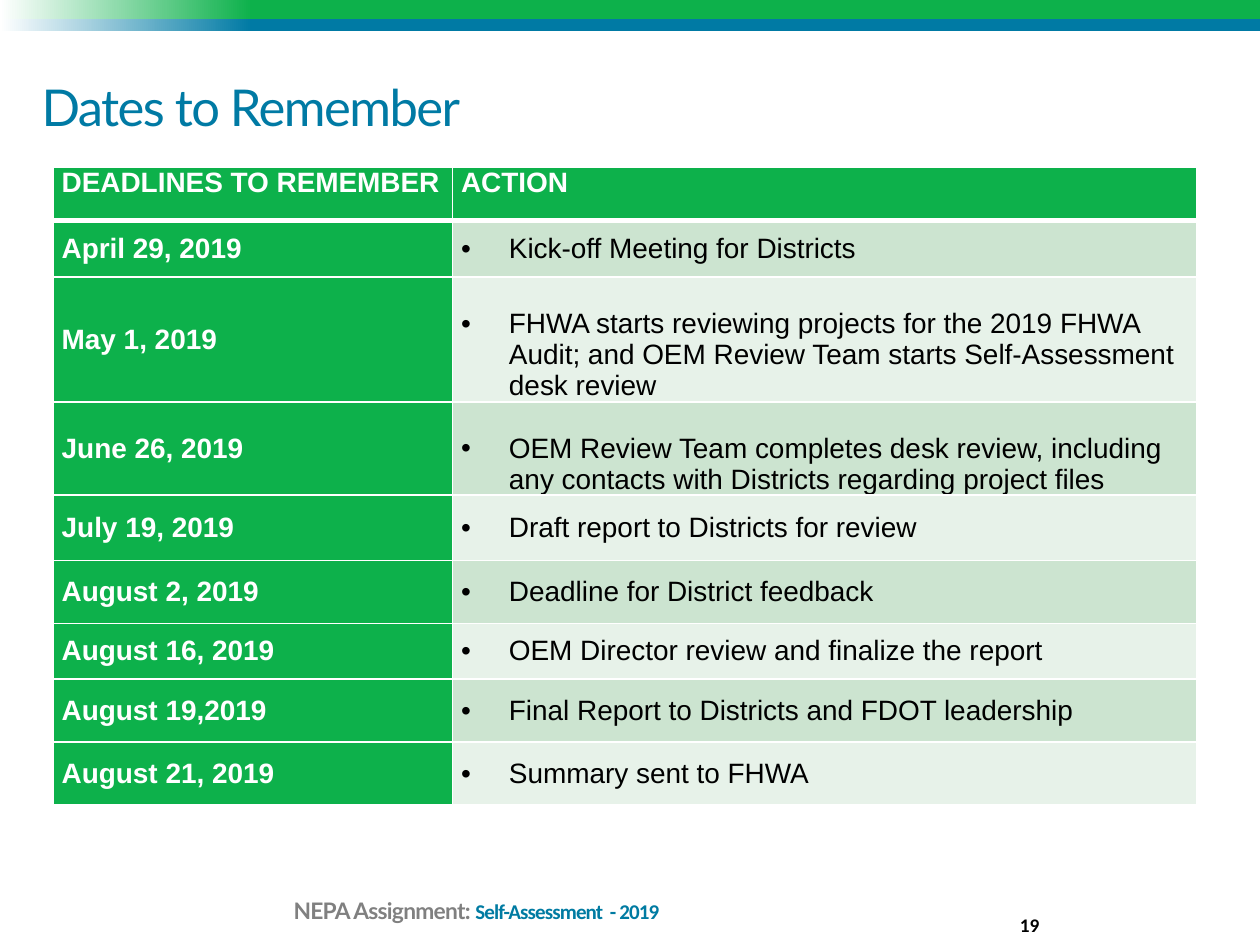
from dataclasses import dataclass

import pptx
import pptx.dml.color
import pptx.enum.shapes
import pptx.enum.text
import pptx.oxml
import pptx.oxml.ns
import pptx.util
from pptx.dml.color import RGBColor
from pptx.enum.text import MSO_ANCHOR, PP_ALIGN
from pptx.util import Inches, Pt

GREEN = RGBColor(0x0D, 0xB1, 0x4B)
BLUE = RGBColor(0x00, 0x7A, 0xA4)
FOOTER_BLUE = RGBColor(0x00, 0x7B, 0xA2)
GRAY = RGBColor(0x80, 0x80, 0x80)
BLACK = RGBColor(0x00, 0x00, 0x00)
WHITE = RGBColor(0xFF, 0xFF, 0xFF)
BAND_DARK = RGBColor(0xCC, 0xE4, 0xD0)
BAND_LIGHT = RGBColor(0xE7, 0xF2, 0xE9)


@dataclass
class Piece:
    text: str
    size: float
    font: str
    color: RGBColor
    bold: bool = False
    spacing: float = 0  # points between letters


@dataclass
class Deadline:
    date: str
    action: str
    height: float
    anchor: MSO_ANCHOR = MSO_ANCHOR.MIDDLE


DEADLINES = [
    Deadline("April 29, 2019", "Kick-off Meeting for Districts", 0.45),
    Deadline("May 1, 2019",
             "FHWA starts reviewing projects for the 2019 FHWA Audit; and OEM "
             "Review Team starts Self-Assessment desk review",
             0.99, MSO_ANCHOR.BOTTOM),
    Deadline("June 26, 2019",
             "OEM Review Team completes desk review, including any contacts "
             "with Districts regarding project files",
             0.74, MSO_ANCHOR.BOTTOM),
    Deadline("July 19, 2019", "Draft report to Districts for review", 0.52),
    Deadline("August 2, 2019", "Deadline for District feedback", 0.5),
    Deadline("August 16, 2019", "OEM Director review and finalize the report", 0.44),
    Deadline("August 19,2019", "Final Report to Districts and FDOT leadership", 0.5),
    Deadline("August 21, 2019", "Summary sent to FHWA", 0.5),
]
HEADER_HEIGHT = 0.42
COLUMN_WIDTHS = (3.17, 5.91)


def add_band(slide, top: float, height: float, color: RGBColor) -> None:
    band = slide.shapes.add_shape(
        pptx.enum.shapes.MSO_SHAPE.RECTANGLE,
        Inches(0), Inches(top), Inches(10), Inches(height))
    band.shadow.inherit = False
    band.line.fill.background()
    band.fill.gradient()
    band.fill.gradient_angle = 0
    start, end = band.fill.gradient_stops
    start.color.rgb, start.position = WHITE, 0
    end.color.rgb, end.position = color, 0.2


def add_text(slide, left: float, top: float, width: float, height: float,
             pieces: list[Piece], align: PP_ALIGN = PP_ALIGN.LEFT,
             line_spacing: float = 1.0, space_after: float = 0) -> None:
    box = slide.shapes.add_textbox(
        Inches(left), Inches(top), Inches(width), Inches(height))
    frame = box.text_frame
    frame.word_wrap = True
    frame.vertical_anchor = MSO_ANCHOR.BOTTOM
    frame.margin_left = frame.margin_right = Inches(0)
    frame.margin_top = frame.margin_bottom = Inches(0)
    paragraph = frame.paragraphs[0]
    paragraph.alignment = align
    paragraph.line_spacing = line_spacing
    paragraph.space_after = Pt(space_after)
    for piece in pieces:
        run = paragraph.add_run()
        run.text = piece.text
        run.font.size = Pt(piece.size)
        run.font.name = piece.font
        run.font.bold = piece.bold
        run.font.color.rgb = piece.color
        if piece.spacing:
            run._r.get_or_add_rPr().set("spc", str(round(piece.spacing * 100)))


def set_borders(cell, top: float = 1, bottom: float = 1) -> None:
    properties = cell._tc.get_or_add_tcPr()
    for side, width in (("L", 1), ("R", 1), ("T", top), ("B", bottom)):
        properties.append(pptx.oxml.parse_xml(
            f'<a:ln{side} {pptx.oxml.ns.nsdecls("a")} w="{Pt(width)}">'
            f'<a:solidFill><a:srgbClr val="{WHITE}"/></a:solidFill></a:ln{side}>'))


def add_bullet(paragraph) -> None:
    properties = paragraph._p.get_or_add_pPr()
    properties.set("marL", str(Inches(0.38)))
    properties.set("indent", str(-Inches(0.38)))
    properties.append(pptx.oxml.parse_xml(
        f'<a:buFont {pptx.oxml.ns.nsdecls("a")} typeface="Arial"/>'))
    properties.append(pptx.oxml.parse_xml(
        f'<a:buChar {pptx.oxml.ns.nsdecls("a")} char="•"/>'))


def fill_cell(cell, text: str, fill: RGBColor, color: RGBColor = WHITE,
              bold: bool = True, anchor: MSO_ANCHOR = MSO_ANCHOR.MIDDLE,
              bulleted: bool = False) -> None:
    cell.fill.solid()
    cell.fill.fore_color.rgb = fill
    cell.vertical_anchor = anchor
    cell.margin_left = cell.margin_right = Inches(0.07)
    cell.margin_top = cell.margin_bottom = Inches(0)
    cell.text = text
    paragraph = cell.text_frame.paragraphs[0]
    if bulleted:
        add_bullet(paragraph)
    paragraph.font.size = Pt(16)
    paragraph.font.name = "Arial"
    paragraph.font.bold = bold
    paragraph.font.color.rgb = color


def add_deadline_table(slide) -> None:
    heights = [HEADER_HEIGHT] + [deadline.height for deadline in DEADLINES]
    table = slide.shapes.add_table(
        len(heights), len(COLUMN_WIDTHS), Inches(0.42), Inches(1.33),
        Inches(sum(COLUMN_WIDTHS)), Inches(sum(heights))).table
    table.horz_banding = False
    for column, width in zip(table.columns, COLUMN_WIDTHS):
        column.width = Inches(width)
    for row, height in zip(table.rows, heights):
        row.height = Inches(height)

    # Header row, set off by a thicker rule
    for column, heading in enumerate(("DEADLINES TO REMEMBER", "ACTION")):
        cell = table.cell(0, column)
        set_borders(cell, bottom=3)
        fill_cell(cell, heading, GREEN, anchor=MSO_ANCHOR.TOP)

    # One row per deadline, with alternating bands
    for row, deadline in enumerate(DEADLINES, start=1):
        date, action = table.cell(row, 0), table.cell(row, 1)
        for cell in (date, action):
            set_borders(cell, top=3 if row == 1 else 1)
        fill_cell(date, deadline.date, GREEN)
        fill_cell(action, deadline.action, BAND_DARK if row % 2 else BAND_LIGHT,
                  BLACK, False, deadline.anchor, bulleted=True)


def main() -> None:
    presentation = pptx.Presentation()
    presentation.slide_width = Inches(10)
    presentation.slide_height = Inches(7.5)
    slide = presentation.slides.add_slide(presentation.slide_layouts[6])

    # Top bands
    add_band(slide, 0, 0.15, GREEN)
    add_band(slide, 0.15, 0.1, BLUE)

    # Title
    add_text(slide, 0.33, 0.18, 8.84, 0.9,
             [Piece("Dates to Remember", 29, "Lato", BLUE, spacing=-0.9)],
             line_spacing=0.8)

    add_deadline_table(slide)

    # Footer and page number
    add_text(slide, 2.33, 6.86, 5.41, 0.47,
             [Piece("NEPA Assignment: ", 13, "Lato", GRAY, True, -0.4),
              Piece("Self-Assessment  - 2019", 12, "Calibri", FOOTER_BLUE, True, -0.5)],
             line_spacing=0.8, space_after=12)
    add_text(slide, 7.67, 7.03, 0.58, 0.4,
             [Piece("19", 11, "Calibri", BLACK, True)], PP_ALIGN.RIGHT)

    presentation.save("out.pptx")


if __name__ == "__main__":
    main()
